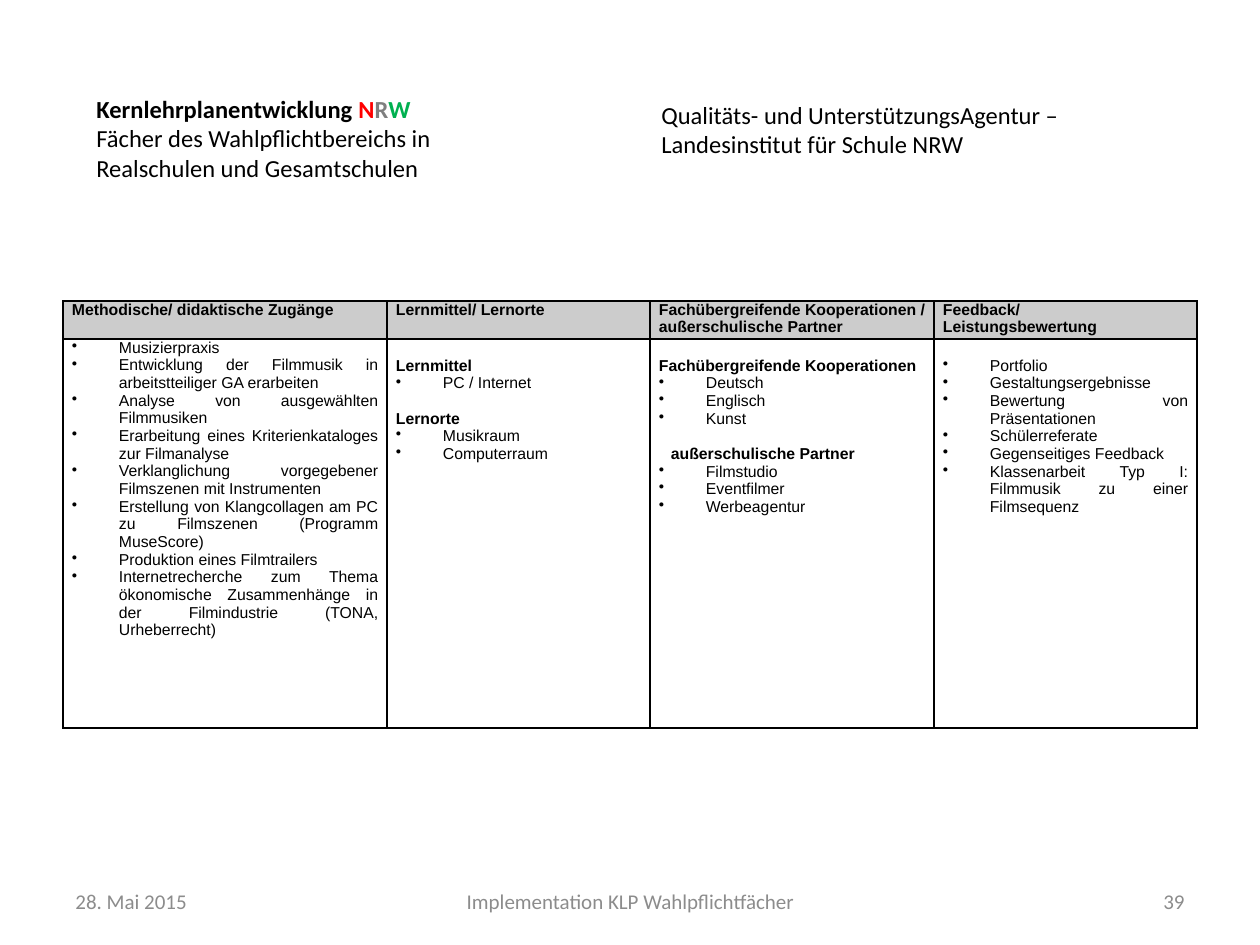
from dataclasses import dataclass

from lxml.etree import SubElement
from pptx import Presentation
from pptx.dml.color import RGBColor
from pptx.enum.text import MSO_ANCHOR, PP_ALIGN
from pptx.oxml.ns import qn
from pptx.util import Emu, Pt

PIXELS_PER_INCH = 126
BLACK, FOOTER_GREY, HEADER_GREY = "000000", "8C8C8C", "CCCCCC"
BULLET_INDENT = 47
LINE_HEIGHT = 18


@dataclass(frozen=True)
class Run:
    text: str
    color: str = BLACK
    bold: bool = False


@dataclass(frozen=True)
class TextBox:
    left: int
    top: int
    width: int
    height: int
    size: int
    paragraphs: list[list[Run]]
    align: PP_ALIGN = PP_ALIGN.LEFT


@dataclass(frozen=True)
class Group:
    """A bullet list with an optional bold heading."""
    items: list[str]
    heading: str = ""
    indent: int = 0


@dataclass(frozen=True)
class Column:
    width: int
    header: list[str]
    groups: list[Group]
    top_margin: int = LINE_HEIGHT


TEXT_BOXES = [
    TextBox(84, 59, 427, 158, 14, [
        [Run("Kernlehrplanentwicklung ", bold=True), Run("N", "FF0000", True),
         Run("R", "7F7F7F", True), Run("W", "00B050", True)],
        [Run("Fächer des Wahlpflichtbereichs in")],
        [Run("Realschulen und Gesamtschulen")],
    ]),
    TextBox(649, 50, 428, 158, 14, [
        [Run("Qualitäts- und UnterstützungsAgentur –")],
        [Run("Landesinstitut für Schule NRW")],
    ]),
    TextBox(431, 876, 399, 50, 12,
            [[Run("Implementation KLP Wahlpflichtfächer", FOOTER_GREY)]], PP_ALIGN.CENTER),
    TextBox(903, 876, 294, 50, 12, [[Run("39", FOOTER_GREY)]], PP_ALIGN.RIGHT),
    TextBox(63, 876, 294, 50, 12, [[Run("28. Mai 2015", FOOTER_GREY)]]),
]

COLUMNS = [
    Column(324, ["Methodische/ didaktische Zugänge"], [Group([
        "Musizierpraxis",
        "Entwicklung der Filmmusik in arbeitstteiliger GA erarbeiten",
        "Analyse von ausgewählten Filmmusiken",
        "Erarbeitung eines Kriterienkataloges zur Filmanalyse",
        "Verklanglichung vorgegebener Filmszenen mit Instrumenten",
        "Erstellung von Klangcollagen am PC zu Filmszenen (Programm MuseScore)",
        "Produktion eines Filmtrailers",
        "Internetrecherche zum Thema ökonomische Zusammenhänge in der "
        "Filmindustrie (TONA, Urheberrecht)",
    ])], top_margin=0),
    Column(263, ["Lernmittel/ Lernorte"], [
        Group(["PC / Internet"], "Lernmittel"),
        Group(["Musikraum", "Computerraum"], "Lernorte"),
    ]),
    Column(284, ["Fachübergreifende Kooperationen / außerschulische Partner"], [
        Group(["Deutsch", "Englisch", "Kunst"], "Fachübergreifende Kooperationen"),
        Group(["Filmstudio", "Eventfilmer", "Werbeagentur"], "außerschulische Partner", 12),
    ]),
    Column(263, ["Feedback/", "Leistungsbewertung"], [Group([
        "Portfolio",
        "Gestaltungsergebnisse",
        "Bewertung von Präsentationen",
        "Schülerreferate",
        "Gegenseitiges Feedback",
        "Klassenarbeit Typ I: Filmmusik zu einer Filmsequenz",
    ])]),
]


def px(length: int) -> Emu:
    return Emu(round(length * 914400 / PIXELS_PER_INCH))


def color_of(value: str) -> RGBColor:
    return RGBColor.from_string(value)


def add_run(paragraph, run: Run, font_name: str, size: int) -> None:
    text_run = paragraph.add_run()
    text_run.text = run.text
    font = text_run.font
    font.name, font.size, font.bold = font_name, Pt(size), run.bold
    font.color.rgb = color_of(run.color)


def next_paragraph(frame, is_first: bool):
    return frame.paragraphs[0] if is_first else frame.add_paragraph()


def add_text_box(slide, box: TextBox) -> None:
    shape = slide.shapes.add_textbox(px(box.left), px(box.top), px(box.width), px(box.height))
    frame = shape.text_frame
    frame.word_wrap = True
    frame.vertical_anchor = MSO_ANCHOR.MIDDLE
    for index, runs in enumerate(box.paragraphs):
        paragraph = next_paragraph(frame, index == 0)
        paragraph.alignment = box.align
        for run in runs:
            add_run(paragraph, run, "Calibri", box.size)


def add_cell_line(cell, is_first: bool, text: str, bold: bool = False,
                  indent: int = 0, bullet: bool = False, gap: bool = False) -> None:
    paragraph = next_paragraph(cell.text_frame, is_first)
    properties = paragraph._p.get_or_add_pPr()
    if bullet:
        properties.set("marL", str(px(BULLET_INDENT)))
        properties.set("indent", str(-px(BULLET_INDENT)))
        SubElement(properties, qn("a:buChar"), char="•")
    elif indent:
        properties.set("marL", str(px(indent)))
    paragraph.alignment = PP_ALIGN.JUSTIFY
    if gap:
        paragraph.space_before = Pt(10)
    add_run(paragraph, Run(text, bold=bold), "Arial", 9)


def style_cell(cell, top_margin: int, fill: str = "") -> None:
    cell.margin_left = cell.margin_right = px(9)
    cell.margin_top, cell.margin_bottom = px(top_margin), 0
    properties = cell._tc.get_or_add_tcPr()
    for side in ("lnL", "lnR", "lnT", "lnB"):
        line = SubElement(properties, qn(f"a:{side}"), w=str(Pt(1)))
        solid = SubElement(line, qn("a:solidFill"))
        SubElement(solid, qn("a:srgbClr"), val=BLACK)
    if fill:
        cell.fill.solid()
        cell.fill.fore_color.rgb = color_of(fill)
    else:
        cell.fill.background()


def fill_body(cell, groups: list[Group]) -> None:
    for group_index, group in enumerate(groups):
        starts_cell = group_index == 0
        if group.heading:
            add_cell_line(cell, starts_cell, group.heading, bold=True,
                          indent=group.indent, gap=not starts_cell)
        for item_index, item in enumerate(group.items):
            is_first = starts_cell and item_index == 0 and not group.heading
            add_cell_line(cell, is_first, item, bullet=True)


def add_plan_table(slide, left: int, top: int, row_heights: list[int]) -> None:
    width = sum(column.width for column in COLUMNS)
    frame = slide.shapes.add_table(len(row_heights), len(COLUMNS), px(left), px(top),
                                   px(width), px(sum(row_heights)))
    table = frame.table
    table.first_row = table.horz_banding = False
    for row, height in zip(table.rows, row_heights):
        row.height = px(height)
    for index, column in enumerate(COLUMNS):
        table.columns[index].width = px(column.width)
        header, body = table.cell(0, index), table.cell(1, index)
        style_cell(header, 0, HEADER_GREY)
        for line_index, text in enumerate(column.header):
            add_cell_line(header, line_index == 0, text, bold=True)
        style_cell(body, column.top_margin)
        fill_body(body, column.groups)


def main() -> None:
    presentation = Presentation()
    presentation.slide_width, presentation.slide_height = px(1260), px(945)
    slide = presentation.slides.add_slide(presentation.slide_layouts[6])

    # Page header and footer
    for box in TEXT_BOXES:
        add_text_box(slide, box)

    # Curriculum table
    add_plan_table(slide, left=63, top=301, row_heights=[37, 389])

    presentation.save("out.pptx")


if __name__ == "__main__":
    main()
